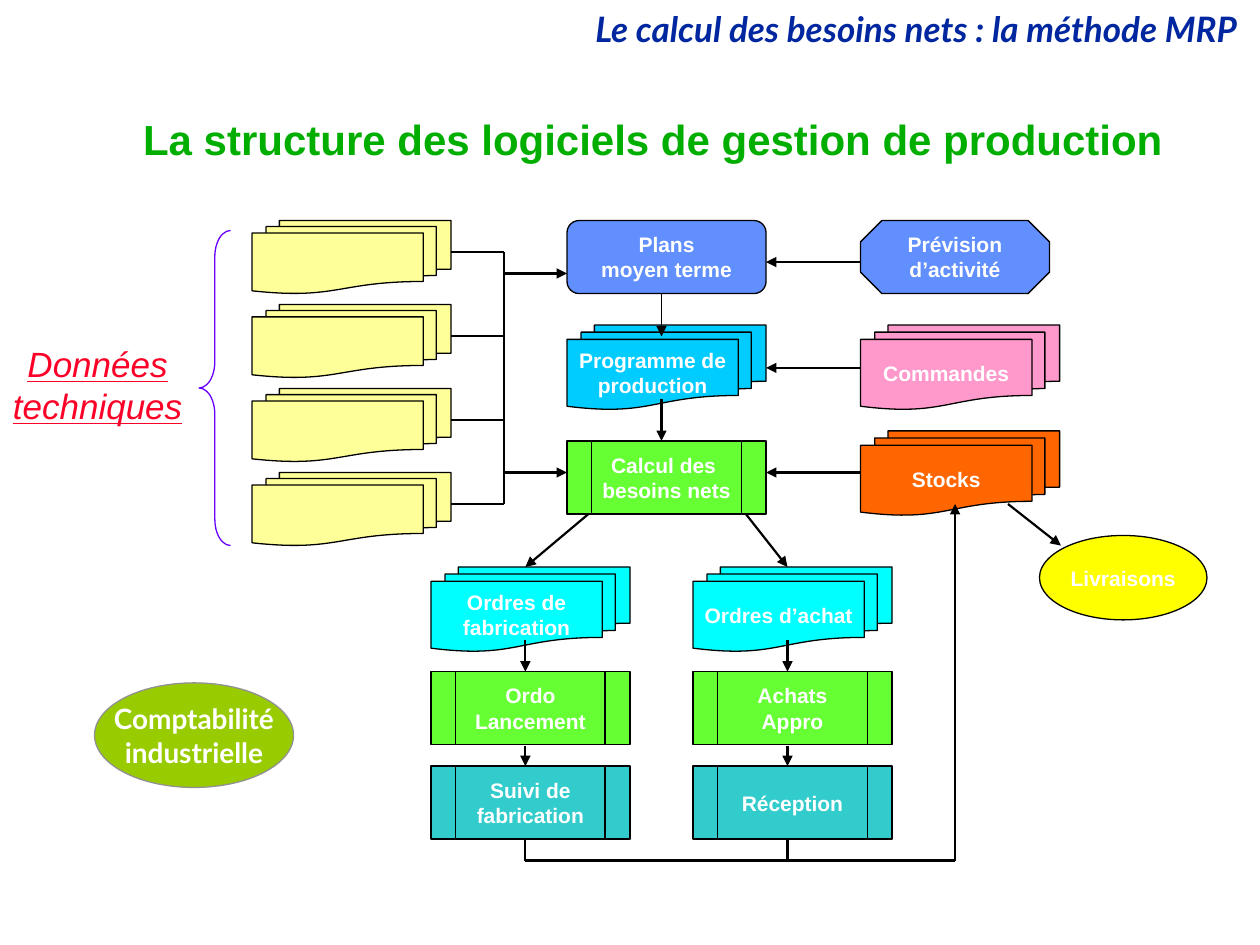
from lxml.etree import SubElement
from pptx import Presentation
from pptx.dml.color import RGBColor
from pptx.enum.shapes import MSO_CONNECTOR, MSO_SHAPE as Preset
from pptx.enum.text import MSO_ANCHOR, PP_ALIGN
from pptx.oxml.ns import qn
from pptx.util import Inches, Pt

COLOURS = {
    "navy": "00279F", "title": "00AE00", "red": "FC0128", "violet": "6600FF",
    "black": "000000", "white": "FFFFFF", "grey": "919191", "cream": "FFFF99",
    "blue": "618FFD", "sky": "00CCFF", "cyan": "00FFFF", "pink": "FF99CC",
    "orange": "FF6600", "green": "66FF33", "teal": "33CCCC", "yellow": "FFFF00",
    "olive": "99CC00",
}
HEADER = "Le calcul des besoins nets : la méthode MRP"
TITLE = "La structure des logiciels de gestion de production"
DATA_LABEL = ["Données", "techniques"]

DOCUMENT = Preset.FLOWCHART_MULTIDOCUMENT
PROCESS = Preset.FLOWCHART_PREDEFINED_PROCESS
BOX_W, BOX_H, DOCUMENT_H = 1.58, 0.58, 0.67
DATA_X, PLAN_X, INPUT_X = 2, 4.5, 6.83
MAKE_X, BUY_X = 3.42, 5.5
DATA_COUNT, DATA_TOP, DATA_STEP = 4, 1.75, 2 / 3
BUS_X, MAKE_AXIS, PLAN_AXIS, BUY_AXIS, STOCK_AXIS = 4, 4.17, 5.25, 6.25, 7.58
RETURN_Y = 6.83

STEPS = [
    (["Plans", "moyen terme"], Preset.FLOWCHART_ALTERNATE_PROCESS, "blue", PLAN_X, 1.75, BOX_W, BOX_H),
    (["Programme de", "production"], DOCUMENT, "sky", PLAN_X, 2.58, BOX_W, DOCUMENT_H),
    (["Calcul des ", "besoins nets"], PROCESS, "green", PLAN_X, 3.5, BOX_W, BOX_H),
    (["Prévision", "d’activité"], Preset.OCTAGON, "blue", INPUT_X, 1.75, 1.5, BOX_H),
    (["Commandes"], DOCUMENT, "pink", INPUT_X, 2.58, BOX_W, DOCUMENT_H),
    (["Stocks"], DOCUMENT, "orange", INPUT_X, 3.42, BOX_W, DOCUMENT_H),
    (["Ordres de", "fabrication"], DOCUMENT, "cyan", MAKE_X, 4.5, BOX_W, DOCUMENT_H),
    (["Ordo", "Lancement"], PROCESS, "green", MAKE_X, 5.33, BOX_W, BOX_H),
    (["Suivi de", "fabrication"], PROCESS, "teal", MAKE_X, 6.08, BOX_W, BOX_H),
    (["Ordres d’achat"], DOCUMENT, "cyan", BUY_X, 4.5, BOX_W, DOCUMENT_H),
    (["Achats", "Appro"], PROCESS, "green", BUY_X, 5.33, BOX_W, BOX_H),
    (["Réception"], PROCESS, "teal", BUY_X, 6.08, BOX_W, BOX_H),
    (["Livraisons"], Preset.OVAL, "yellow", 8.25, 4.25, 1.33, DOCUMENT_H),
]
ARROWS = [
    (PLAN_AXIS, 3.17, PLAN_AXIS, 3.5),
    (4.67, 4.08, MAKE_AXIS, 4.5),
    (5.92, 4.08, BUY_AXIS, 4.5),
    (STOCK_AXIS, RETURN_Y, STOCK_AXIS, 4),
    (8, 4, 8.42, 4.33),
]


def rgb(name):
    return RGBColor.from_string(COLOURS[name])


def write(frame, lines, size, colour, font="Arial", align=PP_ALIGN.CENTER,
          wrap=False, anchor=MSO_ANCHOR.MIDDLE, spacing=None, **style):
    frame.word_wrap = wrap
    frame.vertical_anchor = anchor
    for index, line in enumerate(lines):
        paragraph = frame.add_paragraph() if index else frame.paragraphs[0]
        paragraph.alignment = align
        if spacing:
            paragraph.line_spacing = spacing
        run = paragraph.add_run()
        run.text = line
        run.font.name, run.font.size = font, Pt(size)
        run.font.color.rgb = rgb(colour)
        for key, value in style.items():
            setattr(run.font, key, value)


def add_shape(slide, preset, box, fill=None, outline="black"):
    shape = slide.shapes.add_shape(preset, *map(Inches, box))
    shape.shadow.inherit = False
    if fill:
        shape.fill.solid()
        shape.fill.fore_color.rgb = rgb(fill)
    else:
        shape.fill.background()
    shape.line.color.rgb = rgb(outline)
    shape.line.width = Pt(0.75)
    return shape


def add_step(slide, lines, preset, fill, *box):
    shape = add_shape(slide, preset, box, fill)
    write(shape.text_frame, lines, 12, "white", bold=True)


def add_link(slide, ends, width=1.25, arrow=True):
    link = slide.shapes.add_connector(MSO_CONNECTOR.STRAIGHT, *map(Inches, ends))
    link.line.color.rgb = rgb("black")
    link.line.width = Pt(width)
    if arrow:
        SubElement(link.line._get_or_add_ln(), qn("a:tailEnd"), type="triangle")
    SubElement(link._element.spPr, qn("a:effectLst"))


def add_headings(slide):
    header = slide.shapes.add_textbox(*map(Inches, (0, 0.05, 9.92, 0.4)))
    write(header.text_frame, [HEADER], 20, "navy", "Lato", PP_ALIGN.RIGHT, wrap=True,
          anchor=MSO_ANCHOR.TOP, spacing=0.9, bold=True, italic=True)
    title = slide.shapes.title
    title.left, title.top, title.width, title.height = map(Inches, (0.25, 0.75, 9.08, 0.75))
    write(title.text_frame, [TITLE], 24, "title", align=PP_ALIGN.RIGHT, wrap=True,
          spacing=0.9, bold=True)


def add_technical_data(slide):
    for index in range(DATA_COUNT):
        top = DATA_TOP + index * DATA_STEP
        add_shape(slide, DOCUMENT, (DATA_X, top, BOX_W, BOX_H), "cream")
        add_link(slide, (DATA_X + BOX_W, top + 0.25, BUS_X, top + 0.25), 1.5, False)
    add_link(slide, (BUS_X, 2, BUS_X, 4), 1.5, False)
    for y in (2.17, 3.75):
        add_link(slide, (BUS_X, y, PLAN_X, y), 1.5)
    brace = add_shape(slide, Preset.LEFT_BRACE, (1.58, 1.83, 0.25, 2.5), outline="violet")
    brace.adjustments[0] = 0.833
    label = slide.shapes.add_textbox(*map(Inches, (0, 2.67, 1.55, 0.77)))
    write(label.text_frame, DATA_LABEL, 20, "red", anchor=MSO_ANCHOR.TOP,
          italic=True, underline=True)


def add_flow(slide):
    for step in STEPS:
        add_step(slide, *step)
    for y in (2.08, 2.92, 3.75):
        add_link(slide, (INPUT_X, y, PLAN_X + BOX_W, y))
    for axis in (MAKE_AXIS, BUY_AXIS):
        add_link(slide, (axis, 5.08, axis, 5.33))
        add_link(slide, (axis, 5.92, axis, 6.08))
        add_link(slide, (axis, 6.67, axis, RETURN_Y), arrow=False)
    add_link(slide, (MAKE_AXIS, RETURN_Y, STOCK_AXIS, RETURN_Y), arrow=False)
    for ends in ARROWS:
        add_link(slide, ends)
    add_link(slide, (PLAN_AXIS, 2.33, PLAN_AXIS, 2.67), 1)
    accounting = add_shape(slide, Preset.OVAL, (0.75, 5.42, BOX_W, 0.83), "olive", "grey")
    write(accounting.text_frame, ["Comptabilité", "industrielle"], 16, "white", "Lato", bold=True)


def main():
    """Build the slide on the structure of production management software."""
    deck = Presentation()
    deck.slide_width, deck.slide_height = Inches(10), Inches(7.5)
    slide = deck.slides.add_slide(deck.slide_layouts[5])
    add_headings(slide)
    add_technical_data(slide)
    add_flow(slide)
    deck.save("out.pptx")


if __name__ == "__main__":
    main()
